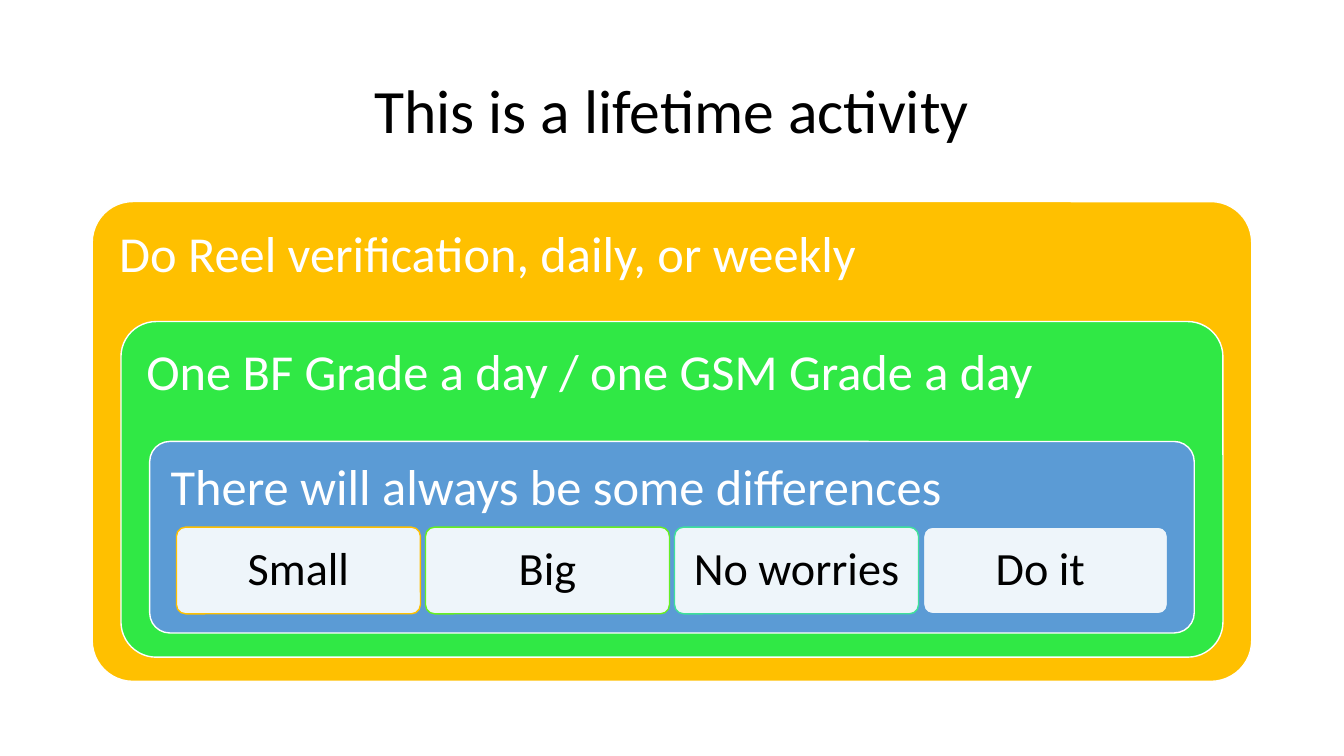
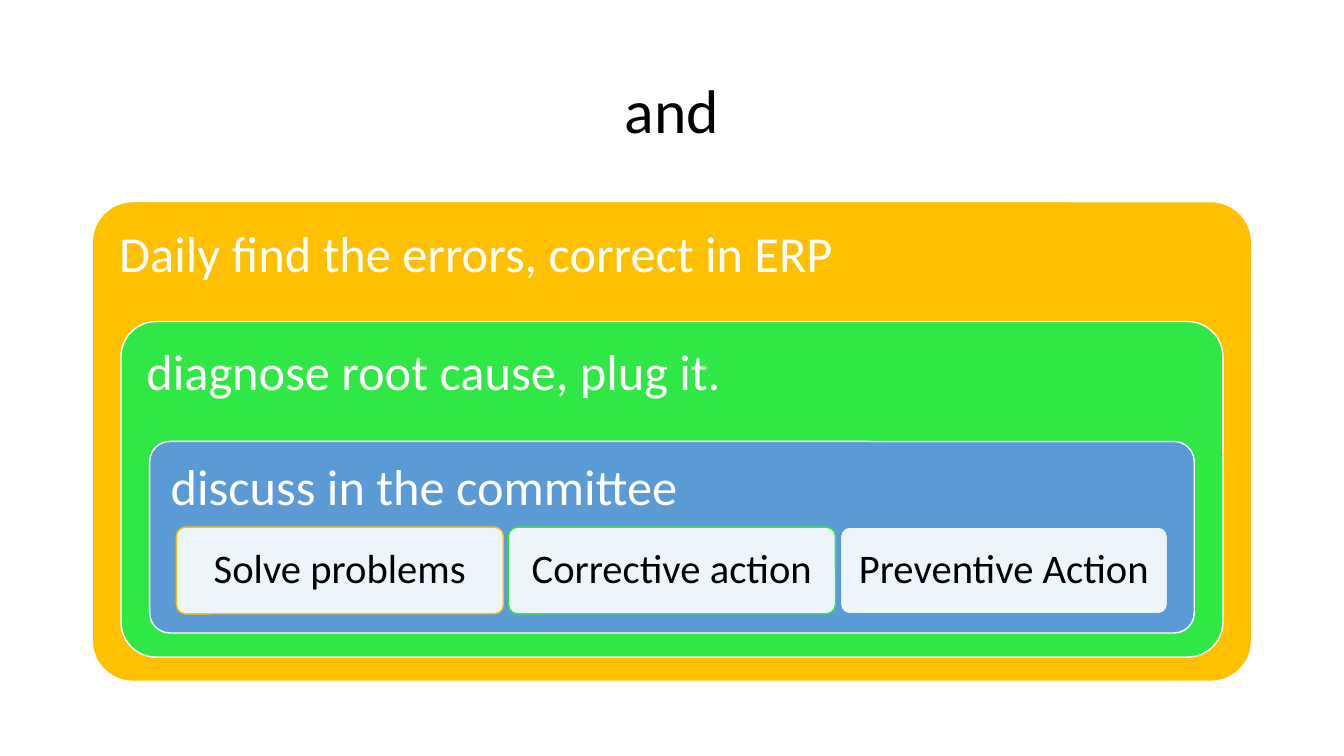
from dataclasses import dataclass

import pptx
import pptx.dml.color
import pptx.enum.shapes
import pptx.enum.text
import pptx.oxml.ns
import pptx.oxml.xmlchemy
import pptx.util
from lxml import etree
from pptx.util import Inches


@dataclass(frozen=True)
class Theme:
    font: str = "Calibri"
    title_size: int = 44
    band_size: int = 36
    black: str = "000000"
    white: str = "FFFFFF"
    amber: str = "FFC000"
    green: str = "30E845"
    blue: str = "5B9BD5"
    lime: str = "67EF21"
    teal: str = "3FE19B"
    tile_opacity: int = 90


THEME = Theme()
SLIDE_WIDTH, SLIDE_HEIGHT = 13.33, 7.5
TITLE_TOP, TITLE_WIDTH, TITLE_HEIGHT = 0.4, 11.5, 1.45
BAND_TOP, BAND_WIDTH, BAND_BOTTOM = 2, 11.5, 6.76
BAND_TOP_STEP, BAND_WIDTH_STEP, BAND_BOTTOM_STEP = 1.19, 0.57, 0.24
BAND_INSET = 0.15
TILE_TOP, TILE_ROW_WIDTH, TILE_HEIGHT, TILE_GAP = 5.23, 9.83, 0.86, 0.05

BAND_STYLES = [(THEME.amber, 0.085), (THEME.green, 0.105), (THEME.blue, 0.105)]
TILE_ROUNDING = 0.105

SLIDES = [
    {
        "title": "This is a lifetime activity",
        "bands": [
            "Do Reel verification, daily, or weekly",
            "One BF Grade a day / one GSM Grade a day",
            "There will always be some differences",
        ],
        "tiles": [
            ("Small", THEME.amber),
            ("Big", THEME.lime),
            ("No worries", THEME.teal),
            ("Do it ", THEME.blue),
        ],
        "tile_size": 33,
        "tile_inset": 0.14,
    },
    {
        "title": "and",
        "bands": [
            "Daily find the errors, correct in ERP",
            "diagnose root cause, plug it.",
            "discuss in the committee",
        ],
        "tiles": [
            ("Solve problems", THEME.amber),
            ("Corrective action", THEME.green),
            ("Preventive Action", THEME.blue),
        ],
        "tile_size": 29,
        "tile_inset": 0.12,
    },
]


def rgb(value):
    return pptx.dml.color.RGBColor.from_string(value)


def write_text(shape, text, *, size, color=THEME.black, centered=True, inset=0.1):
    frame = shape.text_frame
    frame.word_wrap = True
    frame.margin_left = frame.margin_right = Inches(inset)
    frame.margin_top = frame.margin_bottom = Inches(inset)
    anchors = pptx.enum.text.MSO_ANCHOR
    frame.vertical_anchor = anchors.MIDDLE if centered else anchors.TOP
    paragraph = frame.paragraphs[0]
    alignments = pptx.enum.text.PP_ALIGN
    paragraph.alignment = alignments.CENTER if centered else alignments.LEFT
    paragraph.line_spacing = 0.9
    run = paragraph.add_run()
    run.text = text
    run.font.name = THEME.font
    run.font.size = pptx.util.Pt(size)
    run.font.color.rgb = rgb(color)


def add_rounded(slide, left, top, width, height, *, rounding, fill, line, opacity=100):
    shape = slide.shapes.add_shape(
        pptx.enum.shapes.MSO_SHAPE.ROUNDED_RECTANGLE,
        Inches(left), Inches(top), Inches(width), Inches(height),
    )
    shape.adjustments[0] = rounding
    shape.shadow.inherit = False
    shape.fill.solid()
    shape.fill.fore_color.rgb = rgb(fill)
    shape.line.color.rgb = rgb(line)
    shape.line.width = pptx.util.Pt(1)
    if opacity < 100:
        qn = pptx.oxml.ns.qn
        fill_color = shape.fill._xPr.find(qn("a:solidFill")).find(qn("a:srgbClr"))
        etree.SubElement(fill_color, qn("a:alpha")).set("val", str(opacity * 1000))
    return shape


def add_title(slide, text):
    title = slide.shapes.add_textbox(
        Inches((SLIDE_WIDTH - TITLE_WIDTH) / 2), Inches(TITLE_TOP),
        Inches(TITLE_WIDTH), Inches(TITLE_HEIGHT),
    )
    write_text(title, text, size=THEME.title_size)


def add_bands(slide, labels):
    for level, (label, (fill, rounding)) in enumerate(zip(labels, BAND_STYLES)):
        width = BAND_WIDTH - level * BAND_WIDTH_STEP
        top = BAND_TOP + level * BAND_TOP_STEP
        bottom = BAND_BOTTOM - level * BAND_BOTTOM_STEP
        band = add_rounded(
            slide, (SLIDE_WIDTH - width) / 2, top, width, bottom - top,
            rounding=rounding, fill=fill, line=THEME.white,
        )
        write_text(band, label, size=THEME.band_size, color=THEME.white,
                   centered=False, inset=BAND_INSET)


def add_tiles(slide, tiles, size, inset):
    width = (TILE_ROW_WIDTH - (len(tiles) - 1) * TILE_GAP) / len(tiles)
    row_left = (SLIDE_WIDTH - TILE_ROW_WIDTH) / 2
    for column, (label, line) in enumerate(tiles):
        tile = add_rounded(
            slide, row_left + column * (width + TILE_GAP), TILE_TOP, width, TILE_HEIGHT,
            rounding=TILE_ROUNDING, fill=THEME.white, line=line,
            opacity=THEME.tile_opacity,
        )
        write_text(tile, label, size=size, inset=inset)


def main():
    presentation = pptx.Presentation()
    presentation.slide_width = Inches(SLIDE_WIDTH)
    presentation.slide_height = Inches(SLIDE_HEIGHT)
    for content in SLIDES:
        slide = presentation.slides.add_slide(presentation.slide_layouts[6])
        add_title(slide, content["title"])
        add_bands(slide, content["bands"])
        add_tiles(slide, content["tiles"], content["tile_size"], content["tile_inset"])
    presentation.save("out.pptx")


if __name__ == "__main__":
    main()
